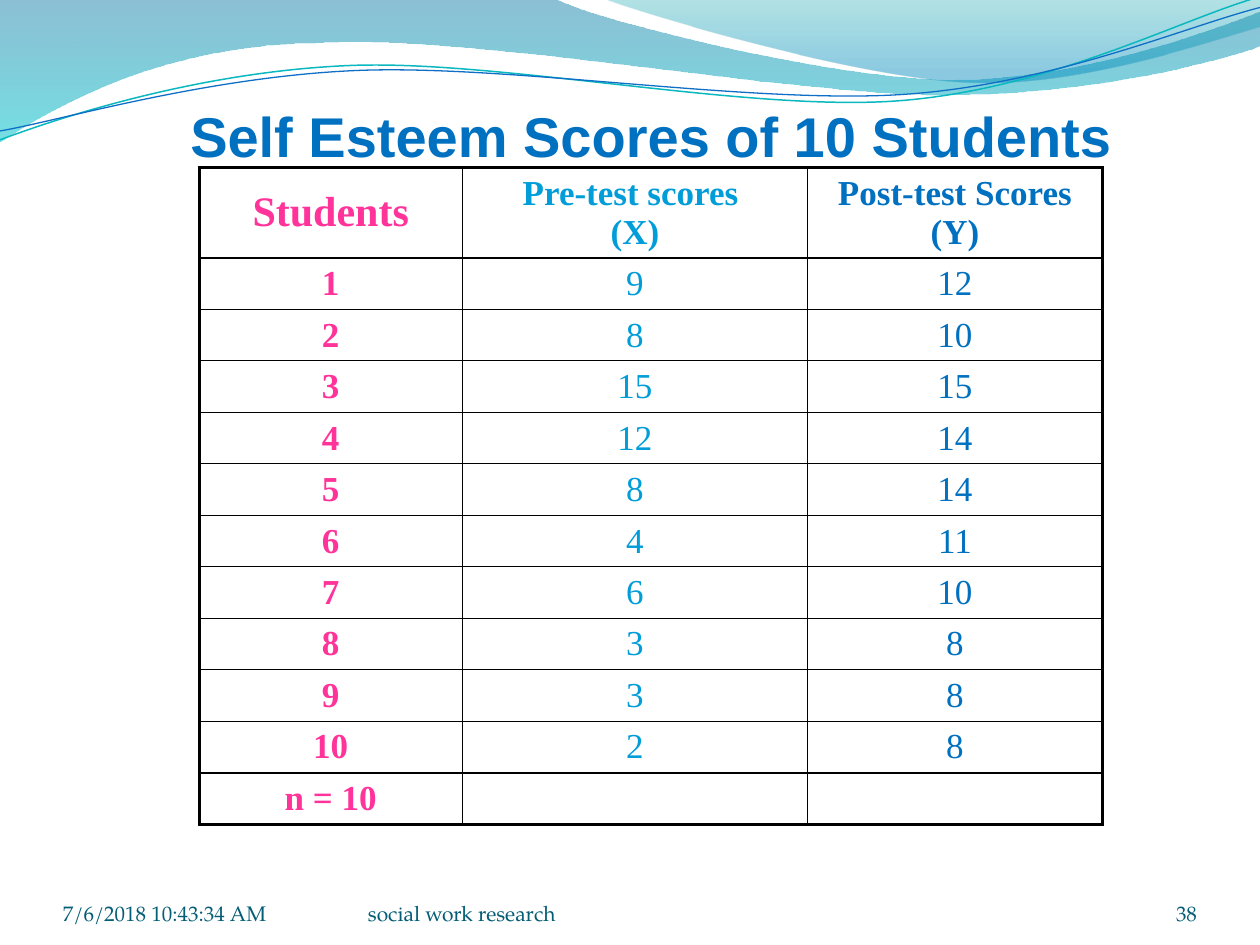
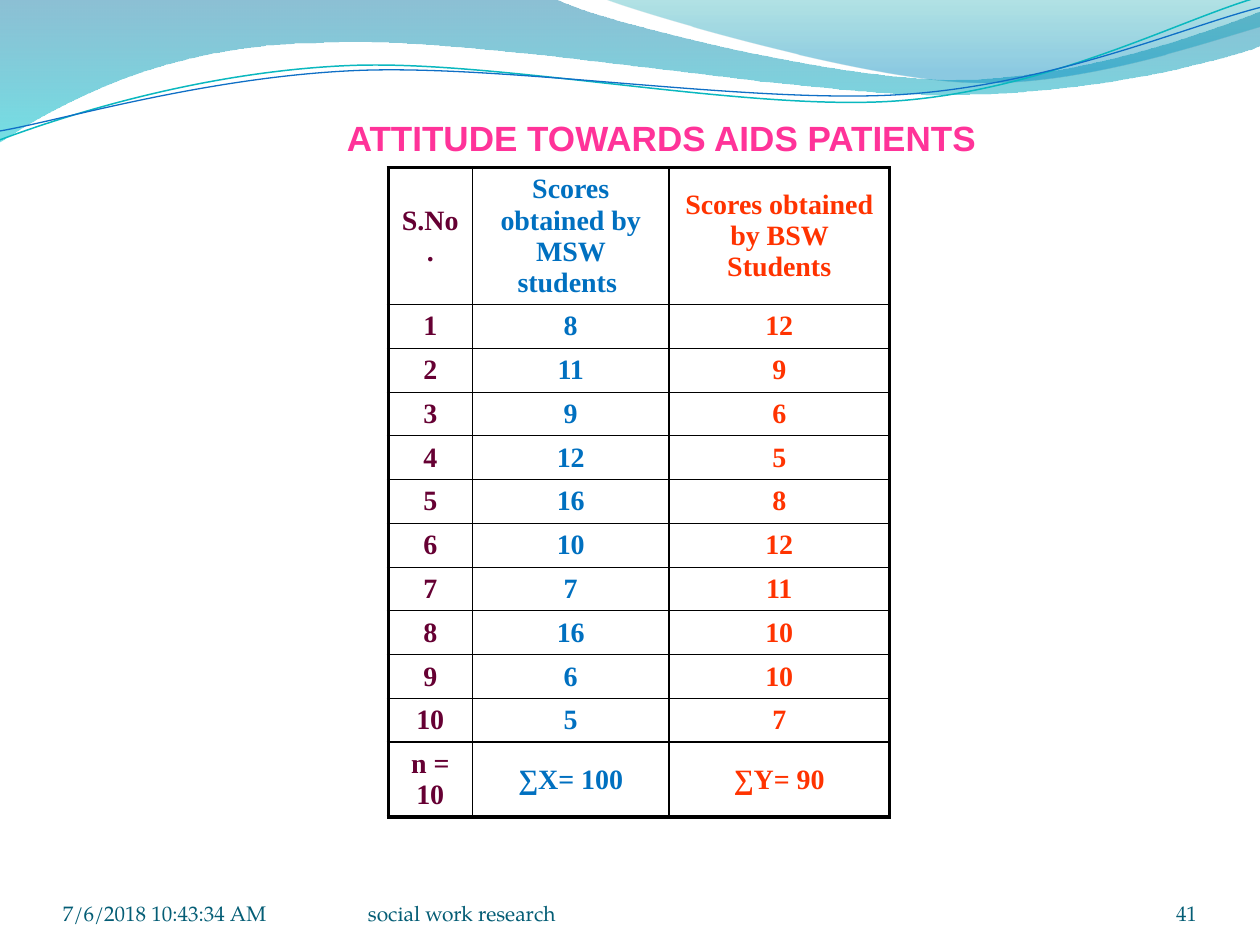
from math import cos, radians, sin
from lxml.etree import SubElement
from pptx import Presentation
from pptx.dml.color import RGBColor
from pptx.enum.text import MSO_ANCHOR, MSO_AUTO_SIZE, PP_ALIGN
from pptx.oxml import parse_xml
from pptx.oxml.ns import nsdecls, qn
from pptx.util import Inches, Pt

BLACK = RGBColor(0x00, 0x00, 0x00)
PINK = RGBColor(0xFF, 0x33, 0x99)
SKY = RGBColor(0x00, 0x9D, 0xD9)
BLUE = RGBColor(0x00, 0x70, 0xC0)
PLUM = RGBColor(0x66, 0x00, 0x33)
RED = RGBColor(0xFF, 0x33, 0x00)
SLATE = RGBColor(0x04, 0x5D, 0x75)
DEEP = RGBColor(0x00, 0x74, 0xA1)
AQUA = RGBColor(0x00, 0xC6, 0xCF)
TEAL = RGBColor(0x00, 0xA1, 0xA9)
OCEAN = RGBColor(0x00, 0x8B, 0xBF)
CYAN = RGBColor(0x0A, 0xB8, 0xBF)
ROYAL = RGBColor(0x0F, 0x6F, 0xC6)

SANS, SERIF, BOOK = "Arial", "Times New Roman", "TeX Gyre Pagella"
TILT = 357.3

BANDS = [
    ([(0, -0.01), (4.4, -0.01),
      (4.76, 0.17, 6.64, 0.63, 7.58, 0.63), (8.53, 0.63, 9.58, 0.26, 10, 0.09),
      (10.01, 0.36),
      (9.83, 0.44, 8.7, 0.76, 7.46, 0.75), (6.22, 0.75, 3.82, 0.28, 2.57, 0.34),
      (1.29, 0.35, 0.46, 0.83, -0.01, 1.13), (0, -0.01)],
     [(0, DEEP, 45), (1, AQUA, 55)]),
    ([(4.79, -0.01),
      (5.09, 0.11, 6.82, 0.62, 7.69, 0.65), (8.56, 0.69, 9.61, 0.32, 10, 0.21),
      (10, 0), (4.79, -0.01)],
     [(0, TEAL, 30), (0.8, OCEAN, 45)]),
]
WAVES = [
    ([(0, 1.11),
      (0.48, 0.93, 1.58, 0.57, 2.77, 0.52), (3.95, 0.47, 5.93, 0.89, 7.13, 0.8),
      (8.33, 0.71, 9.38, 0.15, 9.98, -0.02)], (4.99, 0.57), CYAN, 0.85),
    ([(0, 1.04),
      (0.47, 0.96, 1.64, 0.61, 2.83, 0.56), (4.03, 0.51, 5.97, 0.83, 7.17, 0.75),
      (8.36, 0.67, 9.41, 0.21, 10, 0.06)], (5, 0.59), ROYAL, 0.75),
]


def level(part, hub):
    """Undo the tilt of a path part around a hub."""
    turn, flat = radians(-TILT), []
    for x, y in zip(part[::2], part[1::2]):
        dx, dy = x - hub[0], y - hub[1]
        flat += [hub[0] + dx * cos(turn) - dy * sin(turn),
                 hub[1] + dx * sin(turn) + dy * cos(turn)]
    return flat


def outline(slide, path, close):
    """Draw a path of points and cubic curves as a freeform without shadow."""
    points = [(Inches(x), Inches(y)) for part in path
              for x, y in zip(part[::2], part[1::2])]
    pen = slide.shapes.build_freeform(*points[0])
    pen.add_line_segments(points[1:], close=close)
    shape = pen.convert_to_shape()
    shape.shadow.inherit = False
    lines = iter(list(shape.element.iter(qn("a:lnTo"))))
    for part in path[1:]:
        first = next(lines)
        if len(part) == 6:
            first.tag = qn("a:cubicBezTo")
            for _ in range(2):
                line = next(lines)
                first.append(line[0])
                line.getparent().remove(line)
    return shape


def header(slide):
    """Draw the shaded bands and wave lines and move them to the layout."""
    shapes = []
    for path, stops in BANDS:
        band = outline(slide, path, True)
        band.line.fill.background()
        band.fill.gradient()
        band.fill.gradient_angle = 270
        for stop, (place, color, alpha) in zip(band.fill.gradient_stops, stops):
            stop.position = place
            stop.color.rgb = color
        for tint, (place, color, alpha) in zip(band.element.iter(qn("a:srgbClr")), stops):
            SubElement(tint, qn("a:alpha")).set("val", str(alpha * 1000))
        shapes.append(band)
    for path, hub, color, width in WAVES:
        wave = outline(slide, [level(part, hub) for part in path], False)
        wave.rotation = TILT
        wave.fill.background()
        wave.line.color.rgb = color
        wave.line.width = Pt(width)
        shapes.append(wave)
    tree = slide.slide_layout.shapes.element
    for index, shape in enumerate(shapes):
        next(shape.element.iter(qn("p:cNvPr"))).set("id", str(100 + index))
        tree.append(shape.element)


def style(frame, font, size, color, bold, align):
    """Format every paragraph and run of a text frame."""
    for para in frame.paragraphs:
        para.alignment = align
        for run in para.runs:
            run.font.name = font
            run.font.size = Pt(size)
            run.font.color.rgb = color
            run.font.bold = bold


def heading(slide, text, box, size, color, align, left=0.1, top=0.05, bottom=0.05):
    """Place and format the title in front of what is already drawn."""
    title = slide.shapes.title
    title.left, title.top, title.width, title.height = map(Inches, box)
    frame = title.text_frame
    frame.text = text
    frame.auto_size = MSO_AUTO_SIZE.NONE
    frame.vertical_anchor = MSO_ANCHOR.MIDDLE
    frame.margin_left = Inches(left)
    frame.margin_top, frame.margin_bottom = Inches(top), Inches(bottom)
    style(frame, SANS, size, color, True, align)
    title.element.getparent().append(title.element)


def border(cell, widths):
    """Give a cell black borders, in order left, right, top, bottom."""
    props = cell._tc.get_or_add_tcPr()
    for index, (side, width) in enumerate(zip("LRTB", widths)):
        props.insert(index, parse_xml(
            f'<a:ln{side} {nsdecls("a")} w="{Pt(width)}"><a:solidFill>'
            f'<a:srgbClr val="{BLACK}"/></a:solidFill></a:ln{side}>'))


def scores(slide, rows, spot, widths, heights, colors, size, lead, bold):
    """Build a score table with a heavy frame and one colour per column."""
    last, end = len(rows) - 1, len(widths) - 1
    tall = [heights[0]] + [heights[1]] * last
    grid = slide.shapes.add_table(len(rows), len(widths), *map(
        Inches, (*spot, sum(widths), sum(tall)))).table
    grid.first_row = grid.horz_banding = False
    for column, width in zip(grid.columns, widths):
        column.width = Inches(width)
    rules = [2, 1] + [0.75] * (last - 2) + [1, 2]
    for r, row in enumerate(rows):
        grid.rows[r].height = Inches(tall[r])
        for c, value in enumerate(row):
            cell = grid.cell(r, c)
            cell.text_frame.text = str(value)
            cell.vertical_anchor = MSO_ANCHOR.MIDDLE
            cell.fill.background()
            style(cell.text_frame, SERIF, lead if r == c == 0 else size,
                  colors[c], bold or r == 0 or c == 0, PP_ALIGN.CENTER)
            border(cell, (2 if c == 0 else 1, 2 if c == end else 1,
                          rules[r], rules[r + 1]))


def footer(slide, number):
    """Write the date, the slide number and the course name."""
    for text, left, width, align in (
            ("7/6/2018 10:43:34 AM", 0.5, 2.33, PP_ALIGN.LEFT),
            (number, 8.67, 0.83, PP_ALIGN.RIGHT),
            ("social work research", 2.92, 3.67, PP_ALIGN.LEFT)):
        box = slide.shapes.add_textbox(*map(Inches, (left, 6.95, width, 0.4)))
        frame = box.text_frame
        frame.text = text
        frame.word_wrap = True
        frame.vertical_anchor = MSO_ANCHOR.BOTTOM
        frame.margin_left = frame.margin_right = 0
        frame.margin_top = frame.margin_bottom = 0
        style(frame, BOOK, 12, SLATE, False, align)


def number_rows(first, second):
    """Pair two score lists with running numbers."""
    return list(zip(range(1, len(first) + 1), first, second))


def esteem(slide):
    """Fill the slide on self esteem scores."""
    rows = [("Students", "Pre-test scores \n(X)", "Post-test Scores\n(Y)"),
            *number_rows([9, 8, 15, 12, 8, 4, 6, 3, 3, 2],
                         [12, 10, 15, 14, 14, 11, 10, 8, 8, 8]),
            ("n = 10", "", "")]
    scores(slide, rows, (1.58, 1.33), (2.09, 2.74, 2.34), (0.58, 0.38),
           (PINK, SKY, BLUE), 20, 24, False)
    heading(slide, "Self Esteem Scores of 10 Students", (0.42, 0.33, 9, 1.25),
            32, BLUE, PP_ALIGN.LEFT, left=1.09, top=0.29)
    footer(slide, "38")


def attitude(slide):
    """Fill the slide on attitude scores."""
    heading(slide, "ATTITUDE TOWARDS AIDS PATIENTS", (1, 0.83, 8.5, 0.83),
            20, PINK, PP_ALIGN.CENTER, bottom=0.36)
    rows = [("S.No.", "Scores obtained by MSW students ",
             "Scores obtained by BSW Students"),
            *number_rows([8, 11, 9, 12, 16, 10, 7, 16, 6, 5],
                         [12, 9, 6, 5, 8, 12, 11, 10, 10, 7]),
            ("n = 10", "∑X= 100", "∑Y= 90")]
    scores(slide, rows, (3.08, 1.33), (0.67, 1.56, 1.75), (0.24, 0.24),
           (PLUM, BLUE, RED), 16, 16, True)
    footer(slide, "41")


def main():
    """Build and save the deck."""
    deck = Presentation()
    deck.slide_width, deck.slide_height = Inches(10), Inches(7.5)
    first, second = [deck.slides.add_slide(deck.slide_layouts[5]) for _ in range(2)]
    header(first)
    esteem(first)
    attitude(second)
    deck.save("out.pptx")


if __name__ == "__main__":
    main()
